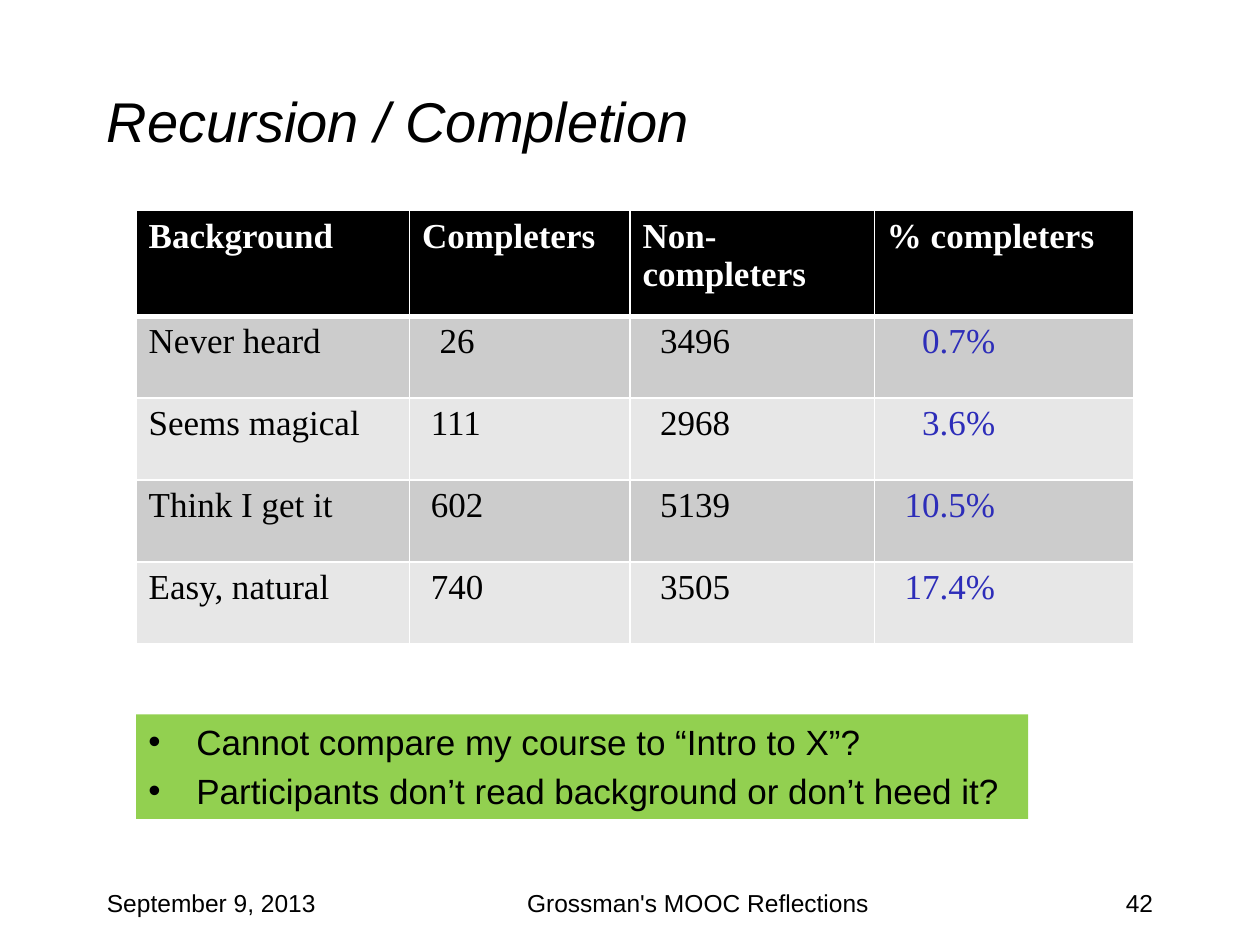
from lxml import etree
from pptx import Presentation
from pptx import util as u
from pptx.dml.color import RGBColor
from pptx.enum import shapes, text
from pptx.oxml import ns

COLORS = {"ink": "000000", "paper": "FFFFFF", "dark_band": "CCCCCC",
          "light_band": "E7E7E7", "percent": "2D2DB9", "note": "92D050"}
SPACE = 0.07  # width of one space in the table text, inches


def color(name):
    return RGBColor.from_string(COLORS[name])


class SlideWriter:
    """Holds the fonts and the current slide."""
    sans, serif = "Arial", "Times New Roman"

    def __init__(self, slide):
        self.slide = slide

    def format(self, frame, size, font, ink="ink", bold=False, italic=False, align=None):
        for para in frame.paragraphs:
            para.alignment = align
            for span in para.runs:
                span.font.size = u.Pt(size)
                span.font.name = font
                span.font.bold = bold
                span.font.italic = italic
                span.font.color.rgb = color(ink)

    def label(self, words, place, size, align=text.PP_ALIGN.LEFT,
              anchor=text.MSO_ANCHOR.TOP, italic=False):
        box = self.slide.shapes.add_textbox(*map(u.Inches, place))
        frame = box.text_frame
        frame.word_wrap = True
        frame.vertical_anchor = anchor
        frame.text = words
        self.format(frame, size, self.sans, italic=italic, align=align)

    def bullet_box(self, lines, place, size):
        box = self.slide.shapes.add_shape(
            shapes.MSO_SHAPE.RECTANGLE, *map(u.Inches, place))
        box.shadow.inherit = False
        box.fill.solid()
        box.fill.fore_color.rgb = color("note")
        box.line.fill.background()
        frame = box.text_frame
        frame.word_wrap = True
        frame.vertical_anchor = text.MSO_ANCHOR.TOP
        frame.text = "\n".join(lines)
        self.format(frame, size, self.sans, align=text.PP_ALIGN.LEFT)
        for para in frame.paragraphs:
            para.space_before = u.Pt(size * 0.2)
            props = para._p.get_or_add_pPr()
            props.set("marL", str(u.Inches(0.38)))
            props.set("indent", str(-u.Inches(0.38)))
            etree.SubElement(props, ns.qn("a:buFont"), typeface=self.sans)
            etree.SubElement(props, ns.qn("a:buChar"), char="•")

    def borders(self, cell, top=1, bottom=1):
        props = cell._tc.get_or_add_tcPr()
        widths = {"lnL": 1, "lnR": 1, "lnT": top, "lnB": bottom}
        for index, (side, width) in enumerate(widths.items()):
            line = etree.Element(ns.qn("a:" + side), w=str(u.Pt(width)))
            fill = etree.SubElement(line, ns.qn("a:solidFill"))
            etree.SubElement(fill, ns.qn("a:srgbClr"), val=COLORS["paper"])
            props.insert(index, line)

    def table(self, rows, indents, place, widths, heights):
        table = self.slide.shapes.add_table(
            len(rows), len(widths), *map(u.Inches, place)).table
        for column, width in zip(table.columns, widths):
            column.width = u.Inches(width)
        for r, (row, height) in enumerate(zip(rows, heights)):
            table.rows[r].height = u.Inches(height)
            header = r == 0
            band = "ink" if header else "dark_band" if r % 2 else "light_band"
            for c, words in enumerate(row):
                cell = table.cell(r, c)
                cell.text = words
                cell.fill.solid()
                cell.fill.fore_color.rgb = color(band)
                ink = "paper" if header else "percent" if c == 3 else "ink"
                self.format(cell.text_frame, 20, self.serif, ink, bold=header)
                if not header:
                    cell.margin_left = u.Inches(0.1 + SPACE * indents[c](words))
                self.borders(cell, top=3 if r == 1 else 1, bottom=3 if header else 1)


def main():
    deck = Presentation()
    deck.slide_width, deck.slide_height = u.Inches(10), u.Inches(7.5)
    page = SlideWriter(deck.slides.add_slide(deck.slide_layouts[6]))

    # Title
    page.label("Recursion / Completion", (0.75, 0.33, 8.5, 1.25), 32,
               anchor=text.MSO_ANCHOR.MIDDLE, italic=True)

    # Footer
    page.label("September 9, 2013", (0.75, 7, 2.08, 0.5), 14)
    page.label("42", (7.17, 7, 2.08, 0.5), 14, text.PP_ALIGN.RIGHT)
    page.label("Grossman's MOOC Reflections", (2.75, 7, 5.58, 0.5), 14,
               text.PP_ALIGN.CENTER)

    # Completion table; indents are in spaces and line up the digits
    rows = [
        ("Background", "Completers", "Non-\ncompleters", "% completers"),
        ("Never heard", "26", "3496", "0.7%"),
        ("Seems magical", "111", "2968", "3.6%"),
        ("Think I get it", "602", "5139", "10.5%"),
        ("Easy, natural", "740", "3505", "17.4%"),
    ]
    indents = [lambda words: 0, lambda words: 4 - len(words),
               lambda words: 2, lambda words: 2 + 2 * (5 - len(words))]
    page.table(rows, indents, (1.08, 1.67, 7.92, 3.43),
               [2.17, 1.75, 1.94, 2.06], [0.84] + [0.65] * 4)

    # Takeaways
    page.bullet_box(["Cannot compare my course to “Intro to X”?",
                     "Participants don’t read background or don’t heed it?"],
                    (1.08, 5.67, 7.08, 0.83), 20)
    deck.save("out.pptx")


if __name__ == "__main__":
    main()
